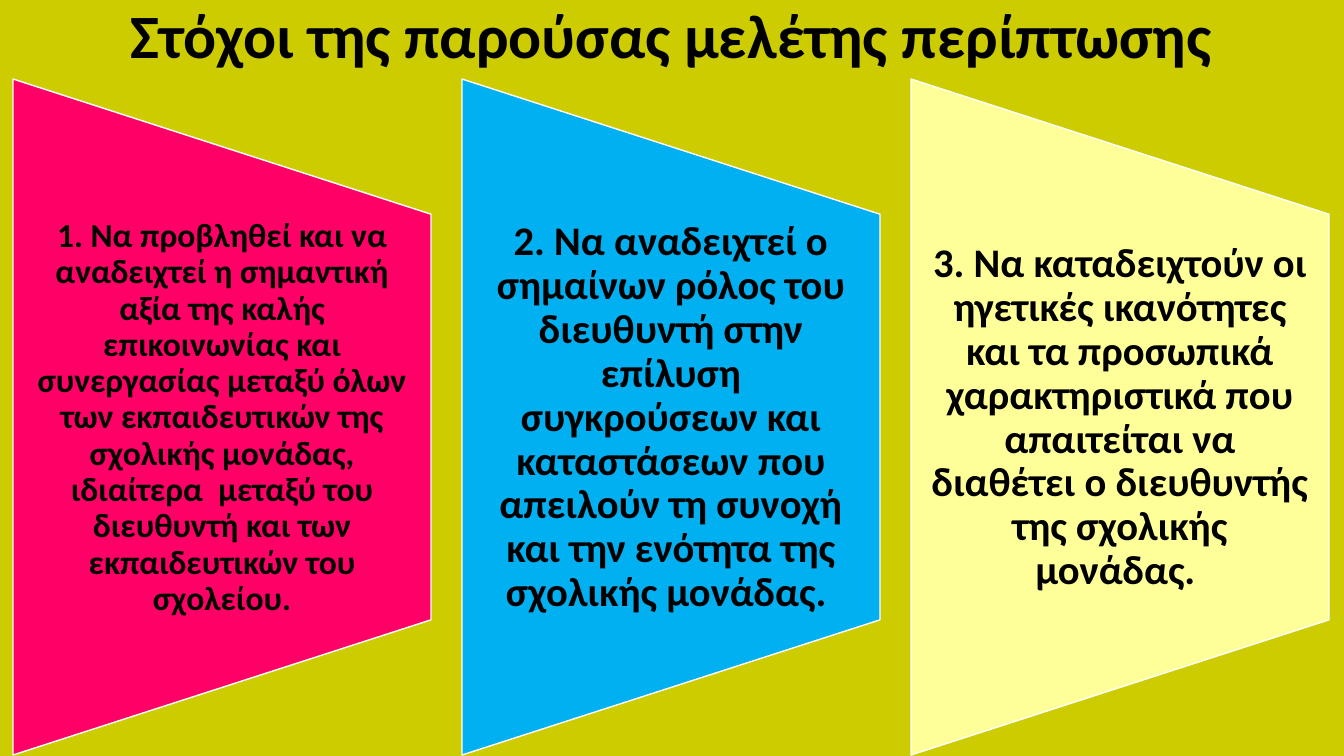
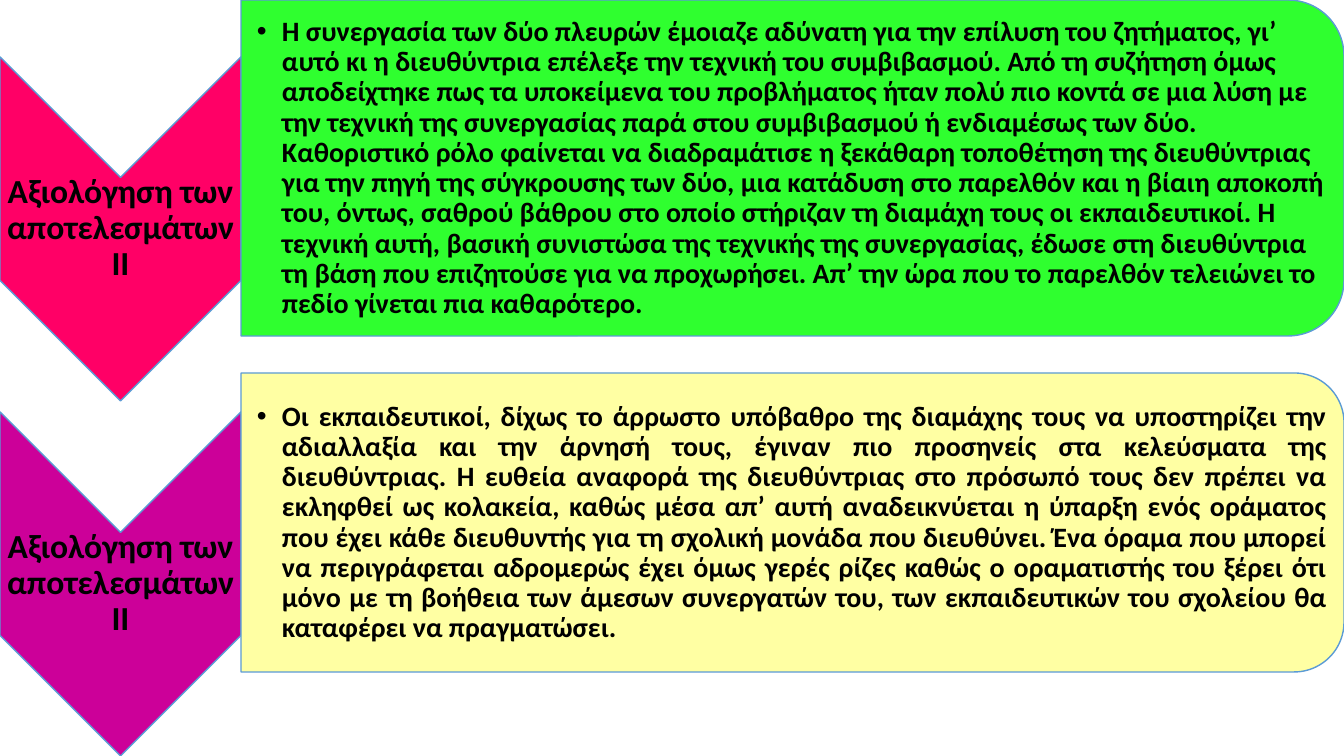
from lxml import etree
from pptx import Presentation
from pptx import util as u
from pptx.dml.color import RGBColor
from pptx.enum import shapes, text
from pptx.oxml.ns import qn

PX = 914400 / 100.8
FONT = "Calibri"
BLACK = RGBColor(0x00, 0x00, 0x00)
WHITE = RGBColor(0xFF, 0xFF, 0xFF)
OLIVE = RGBColor(0xCC, 0xCC, 0x00)
PINK = RGBColor(0xFF, 0x00, 0x66)
SKY = RGBColor(0x00, 0xB0, 0xF0)
CREAM = RGBColor(0xFF, 0xFF, 0x99)
GREEN = RGBColor(0x19, 0xFF, 0x19)
PURPLE = RGBColor(0xCC, 0x00, 0x99)
BLUE = RGBColor(0x5B, 0x9B, 0xD5)
MSO = shapes.MSO_SHAPE
CENTER, LEFT, JUSTIFY = text.PP_ALIGN.CENTER, text.PP_ALIGN.LEFT, text.PP_ALIGN.JUSTIFY
MIDDLE, TOP = text.MSO_ANCHOR.MIDDLE, text.MSO_ANCHOR.TOP


def write(sp, words, box, size=24, align=CENTER, anchor=MIDDLE, insets=(0, 0, 0, 0), hang=0):
    sp.left, sp.top, sp.width, sp.height = [u.Emu(round(n * PX)) for n in box]
    tf = sp.text_frame
    tf.word_wrap = True
    tf.auto_size = text.MSO_AUTO_SIZE.NONE
    tf.vertical_anchor = anchor
    tf.margin_left, tf.margin_top, tf.margin_right, tf.margin_bottom = [
        u.Emu(round(n * PX)) for n in insets]
    p = tf.paragraphs[0]
    p.alignment = align
    p.line_spacing = 0.9
    p.space_before = u.Pt(0)
    if hang:
        pPr = p._p.get_or_add_pPr()
        pPr.set("marL", str(round(hang * PX)))
        pPr.set("indent", str(-round(hang * PX)))
        etree.SubElement(pPr, qn("a:buChar")).set("char", "•")
    r = p.add_run()
    r.text = words
    r.font.name = FONT
    r.font.size = u.Pt(size)
    r.font.bold = True
    r.font.color.rgb = BLACK


def turned(s, kind, box, angle, fill, line, opacity=100):
    x, y, w, h = box
    left, top = x + (w - h) / 2, y + (h - w) / 2
    sp = s.shapes.add_shape(kind, *[u.Emu(round(n * PX)) for n in (left, top, h, w)])
    sp.rotation = angle
    sp.shadow.inherit = False
    sp.fill.solid()
    sp.fill.fore_color.rgb = fill
    sp.line.color.rgb = line
    sp.line.width = u.Pt(1)
    if opacity < 100:
        clr = sp._element.spPr.find(qn("a:solidFill")).find(qn("a:srgbClr"))
        etree.SubElement(clr, qn("a:alpha")).set("val", str(opacity * 1000))


prs = Presentation()
prs.slide_width = u.Emu(round(1344 * PX))
prs.slide_height = u.Emu(round(756 * PX))

s = prs.slides.add_slide(prs.slide_layouts[5])
s.background.fill.solid()
s.background.fill.fore_color.rgb = OLIVE
write(s.shapes.title, "Στόχοι της παρούσας μελέτης περίπτωσης", (0, 0, 1344, 78),
      size=44, anchor=TOP, insets=(10, 5, 10, 5))

goals = [
    (PINK, 24, 17, "1. Να προβληθεί και να αναδειχτεί η σημαντική αξία της καλής επικοινωνίας "
     "και συνεργασίας μεταξύ όλων των εκπαιδευτικών της σχολικής μονάδας, ιδιαίτερα  μεταξύ "
     "του διευθυντή και των εκπαιδευτικών του σχολείου."),
    (SKY, 29, 20, "2. Να αναδειχτεί ο σημαίνων ρόλος του διευθυντή στην επίλυση συγκρούσεων "
     "και καταστάσεων που απειλούν τη συνοχή και την ενότητα της σχολικής μονάδας. "),
    (CREAM, 29, 20, "3. Να καταδειχτούν οι ηγετικές ικανότητες και τα προσωπικά "
     "χαρακτηριστικά που απαιτείται να διαθέτει ο διευθυντής της σχολικής μονάδας. "),
]
for i, (fill, size, pad, words) in enumerate(goals):
    x = 13 + 449 * i
    turned(s, MSO.FLOWCHART_MANUAL_OPERATION, (x, 79, 418, 676), 270, fill, WHITE)
    sp = s.shapes.add_textbox(0, 0, 0, 0)
    write(sp, words, (x, 215, 418, 406), size=size, insets=(pad, 0, pad, 0))

s = prs.slides.add_slide(prs.slide_layouts[3])
title = s.shapes.title._element
title.getparent().remove(title)
bodies = list(s.placeholders)

results = [
    (PINK, GREEN, (241, 0, 1103, 336), (241, 17, 1087, 303), LEFT,
     "Η συνεργασία των δύο πλευρών έμοιαζε αδύνατη για την επίλυση του ζητήματος, γι’ αυτό κι "
     "η διευθύντρια επέλεξε την τεχνική του συμβιβασμού. Από τη συζήτηση όμως αποδείχτηκε πως "
     "τα υποκείμενα του προβλήματος ήταν πολύ πιο κοντά σε μια λύση με την τεχνική της "
     "συνεργασίας παρά στου συμβιβασμού ή ενδιαμέσως των δύο. Καθοριστικό ρόλο φαίνεται να "
     "διαδραμάτισε η ξεκάθαρη τοποθέτηση της διευθύντριας για την πηγή της σύγκρουσης των δύο, "
     "μια κατάδυση στο παρελθόν και η βίαιη αποκοπή του, όντως, σαθρού βάθρου στο οποίο "
     "στήριζαν τη διαμάχη τους οι εκπαιδευτικοί. Η τεχνική αυτή, βασική συνιστώσα της τεχνικής "
     "της συνεργασίας, έδωσε στη διευθύντρια τη βάση που επιζητούσε για να προχωρήσει. Απ’ την "
     "ώρα που το παρελθόν τελειώνει το πεδίο γίνεται πια καθαρότερο."),
    (PURPLE, CREAM, (241, 373, 1103, 299), (241, 388, 1087, 270), JUSTIFY,
     "Οι εκπαιδευτικοί, δίχως το άρρωστο υπόβαθρο της διαμάχης τους να υποστηρίζει την "
     "αδιαλλαξία και την άρνησή τους, έγιναν πιο προσηνείς στα κελεύσματα της διευθύντριας. Η "
     "ευθεία αναφορά της διευθύντριας στο πρόσωπό τους δεν πρέπει να εκληφθεί ως κολακεία, "
     "καθώς μέσα απ’ αυτή αναδεικνύεται η ύπαρξη ενός οράματος που έχει κάθε διευθυντής για τη "
     "σχολική μονάδα που διευθύνει. Ένα όραμα που μπορεί να περιγράφεται αδρομερώς έχει όμως "
     "γερές ρίζες καθώς ο οραματιστής του ξέρει ότι μόνο με τη βοήθεια των άμεσων συνεργατών "
     "του, των εκπαιδευτικών του σχολείου θα καταφέρει να πραγματώσει."),
]
for i, (arrow, fill, panel, box, align, words) in enumerate(results):
    y = 57 + 355 * i
    turned(s, MSO.CHEVRON, (0, y, 241, 344), 90, arrow, BLUE)
    sp = s.shapes.add_textbox(0, 0, 0, 0)
    write(sp, "Αξιολόγηση των αποτελεσμάτων ΙΙ", (0, y + 120, 241, 103), insets=(2, 2, 2, 2))
    turned(s, MSO.ROUND_2_SAME_RECTANGLE, panel, 90, fill, BLUE, opacity=90)
    body = bodies[i]
    s.shapes._spTree.append(body._element)
    write(body, words, box, size=20, align=align, insets=(16, 1, 1, 1), hang=25)

prs.save("out.pptx")
